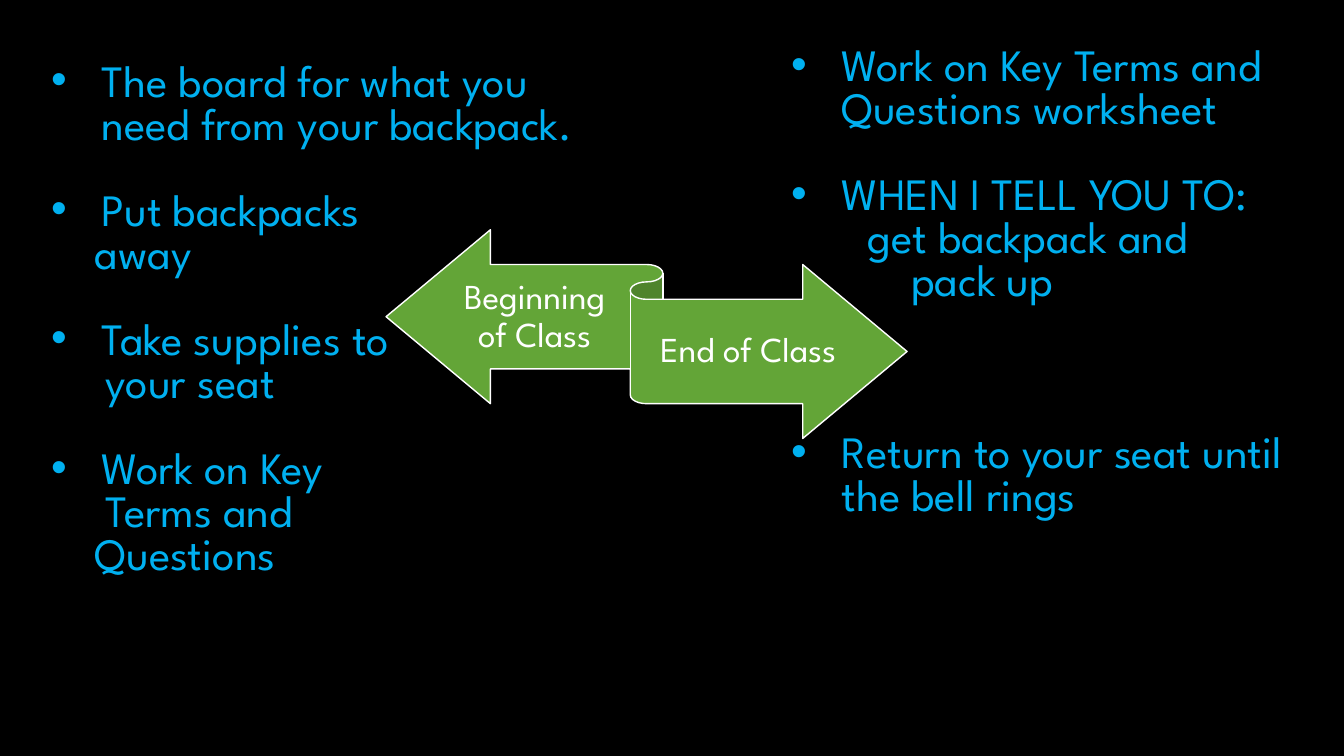
from dataclasses import dataclass

import lxml.etree
import pptx
import pptx.dml.color
import pptx.enum.shapes
import pptx.enum.text
import pptx.oxml.ns
import pptx.util

Cm = pptx.util.Cm
Pt = pptx.util.Pt
RGB = pptx.dml.color.RGBColor


@dataclass(frozen=True)
class Theme:
    background = RGB(0x00, 0x00, 0x00)
    steps = RGB(0x00, 0xB0, 0xF0)
    ribbon = RGB(0x63, 0xA5, 0x37)
    on_ribbon = RGB(0xFF, 0xFF, 0xFF)
    font = "League Spartan"
    steps_size = Pt(32)
    ribbon_size = Pt(25)
    line_pitch = 30.7


THEME = Theme()
BULLET_INDENT = Cm(1.27)

# Each step: blank lines above it, its bulleted text, and (indent in cm, text) of the lines under it.
BEGINNING_STEPS = [
    (0, "The board for what you need from your backpack.", []),
    (1, "Put backpacks", [(1.1, "away")]),
    (1, "Take supplies to", [(1.37, "your seat")]),
    (1, "Work on Key", [(1.37, "Terms and"), (1.1, "Questions")]),
]
END_STEPS = [
    (0, "Work on Key Terms and Questions worksheet", []),
    (1, "WHEN I TELL YOU TO:", [(1.92, "get backpack and"), (3.02, "pack up")]),
    (3, "Return to your seat until the bell rings", []),
]


def style_font(font, size, color):
    font.name = THEME.font
    font.size = size
    font.color.rgb = color


def set_indent(paragraph, left, bulleted):
    properties = paragraph._p.get_or_add_pPr()
    properties.set("marL", str(int(left)))
    properties.set("indent", str(-int(left) if bulleted else 0))
    if bulleted:
        qn = pptx.oxml.ns.qn
        lxml.etree.SubElement(properties, qn("a:buFont")).set("typeface", "Arial")
        lxml.etree.SubElement(properties, qn("a:buChar")).set("char", "•")


def add_steps(slide, steps, left, top, width, height):
    frame = slide.shapes.add_textbox(left, top, width, height).text_frame
    frame.word_wrap = True
    lines = []
    for blank_lines, step, continuation in steps:
        lines.append((step, BULLET_INDENT, True, blank_lines))
        lines += [(text, Cm(indent), False, 0) for indent, text in continuation]
    for index, (text, indent, bulleted, blank_lines) in enumerate(lines):
        line = frame.add_paragraph() if index else frame.paragraphs[0]
        line.text = text
        set_indent(line, indent, bulleted)
        line.line_spacing = 0.8
        if blank_lines:
            line.space_before = Pt(blank_lines * THEME.line_pitch)
        style_font(line.font, THEME.steps_size, THEME.steps)
        style_font(line.runs[0].font, THEME.steps_size, THEME.steps)


def add_class_ribbon(slide, left, top, width, height):
    """Two-way ribbon with one label on each arm, sized as shares of the ribbon."""
    group = slide.shapes.add_group_shape()
    ribbon = group.shapes.add_shape(
        pptx.enum.shapes.MSO_SHAPE.LEFT_RIGHT_RIBBON, left, top, width, height)
    ribbon.shadow.inherit = False
    ribbon.fill.solid()
    ribbon.fill.fore_color.rgb = THEME.ribbon
    ribbon.line.color.rgb = THEME.on_ribbon
    ribbon.line.width = Pt(1)

    arms = [("Beginning of Class", 0.12, 0.175, 0.33),
            ("End of Class", 0.5, 0.335, 0.39)]
    for text, x, y, share in arms:
        frame = group.shapes.add_textbox(
            int(left + x * width), int(top + y * height),
            int(share * width), int(0.49 * height)).text_frame
        frame.word_wrap = True
        frame.margin_left = frame.margin_right = 0
        frame.margin_top = frame.margin_bottom = Cm(0.25)
        frame.vertical_anchor = pptx.enum.text.MSO_ANCHOR.MIDDLE
        label = frame.paragraphs[0]
        label.text = text
        label.alignment = pptx.enum.text.PP_ALIGN.CENTER
        label.line_spacing = 0.9
        style_font(label.runs[0].font, THEME.ribbon_size, THEME.on_ribbon)


def main():
    deck = pptx.Presentation()
    deck.slide_width, deck.slide_height = Cm(33.87), Cm(19.05)
    slide = deck.slides.add_slide(deck.slide_layouts.get_by_name("Blank"))
    slide.background.fill.solid()
    slide.background.fill.fore_color.rgb = THEME.background

    add_class_ribbon(slide, Cm(9.73), Cm(5.79), Cm(13.13), Cm(5.26))
    add_steps(slide, BEGINNING_STEPS, Cm(1.04), Cm(1.47), Cm(14.4), Cm(15.67))
    add_steps(slide, END_STEPS, Cm(19.69), Cm(1.07), Cm(14.4), Cm(14.61))
    deck.save("out.pptx")


if __name__ == "__main__":
    main()
